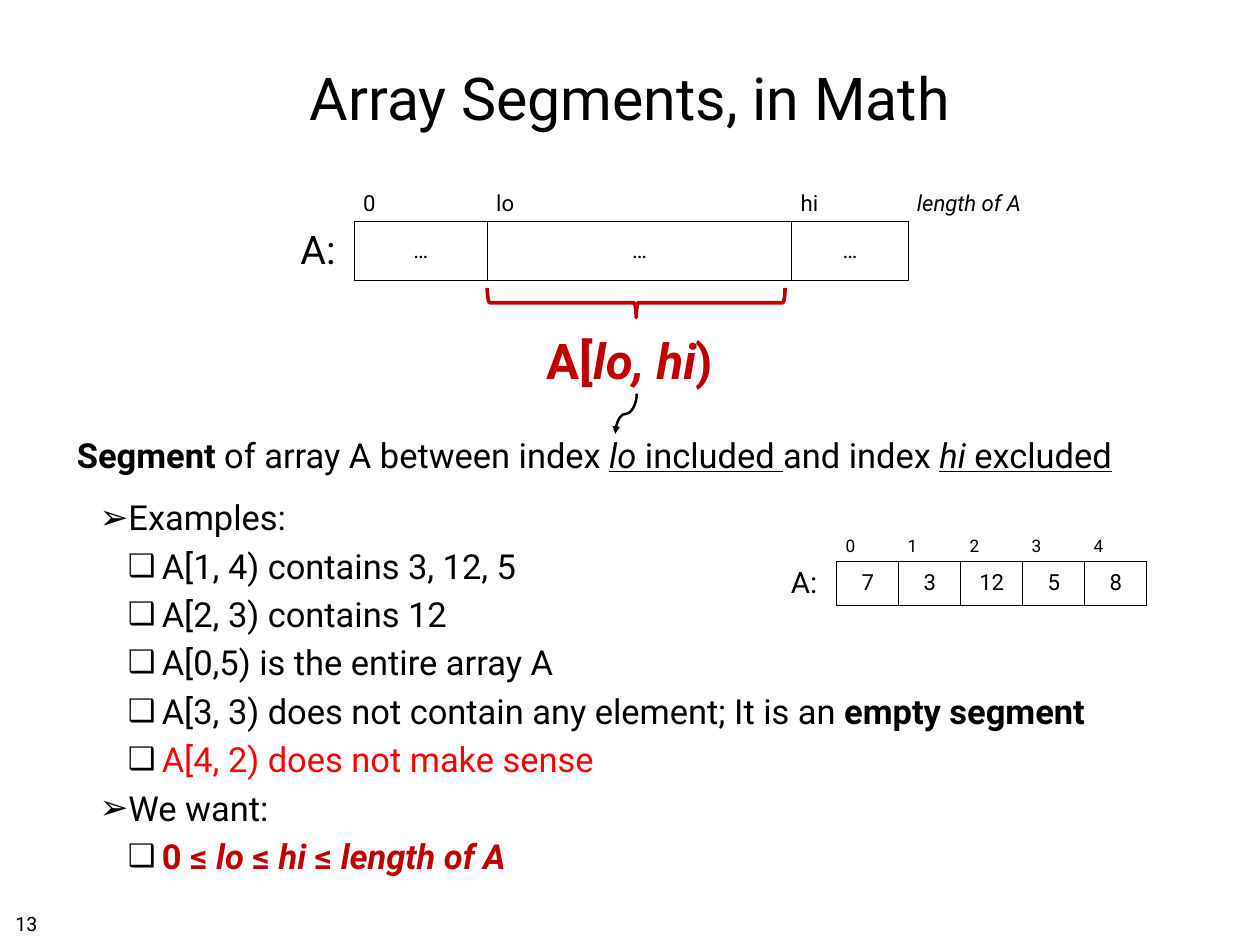
from lxml import etree
from pptx import Presentation
from pptx import util as u
from pptx.dml.color import RGBColor
from pptx.enum import shapes, text
from pptx.oxml import ns

Pt = u.Pt
BLACK = RGBColor(0x00, 0x00, 0x00)
RED = RGBColor(0xFF, 0x00, 0x00)
DARK_RED = RGBColor(0xC0, 0x00, 0x00)
NO_GRID_STYLE = "{2D5ABB26-0587-4C30-8999-92F81FD0307C}"
LEFT, CENTER = text.PP_ALIGN.LEFT, text.PP_ALIGN.CENTER
TOP, MIDDLE, BOTTOM = text.MSO_ANCHOR.TOP, text.MSO_ANCHOR.MIDDLE, text.MSO_ANCHOR.BOTTOM


def add_xml(parent, tag, **attributes):
    return etree.SubElement(parent, ns.qn(tag), attributes)


class SlideBuilder:
    font_name = "Roboto"
    inset = 4.5

    def __init__(self, slide):
        self.slide = slide

    def fill_paragraph(self, paragraph, runs, size, color=BLACK, bold=False, align=LEFT):
        """Fill a paragraph; each run is a text with style letters b, i, u."""
        paragraph.alignment = align
        font = paragraph.font
        font.name, font.size, font.bold = self.font_name, Pt(size), bold
        font.color.rgb = color
        for words, style in runs:
            run = paragraph.add_run()
            run.text = words
            if "b" in style:
                run.font.bold = True
            if "i" in style:
                run.font.italic = True
            if "u" in style:
                run.font.underline = True

    def frame(self, shape, box, anchor=TOP, inset=inset, wrap=True):
        shape.left, shape.top, shape.width, shape.height = map(Pt, box)
        frame = shape.text_frame
        frame.auto_size = text.MSO_AUTO_SIZE.NONE
        frame.word_wrap = wrap
        frame.vertical_anchor = anchor
        frame.margin_left = frame.margin_right = Pt(inset)
        frame.margin_top = frame.margin_bottom = Pt(min(inset, self.inset))
        return frame

    def title(self, box, words, size):
        frame = self.frame(self.slide.shapes.title, box, MIDDLE)
        self.fill_paragraph(frame.paragraphs[0], [(words, "")], size, align=CENTER)

    def bullets(self, box, items, size):
        frame = self.frame(self.slide.placeholders[1], box)
        for index, (level, runs, color, bold) in enumerate(items):
            paragraph = frame.paragraphs[0] if index == 0 else frame.add_paragraph()
            paragraph.level = level
            symbol, percent, margin, hanging, space = {
                1: ("➢", 100, 85.5, 23, 6),
                2: ("❑", 90, 113, 27.5, 5.6),
            }[level]
            paragraph.space_before = Pt(space)
            properties = paragraph._p.get_or_add_pPr()
            properties.set("marL", str(Pt(margin)))
            properties.set("indent", str(-Pt(hanging)))
            add_xml(add_xml(properties, "a:buClr"), "a:srgbClr", val=str(BLACK))
            add_xml(properties, "a:buSzPct", val=str(percent * 1000))
            add_xml(properties, "a:buChar", char=symbol)
            self.fill_paragraph(paragraph, runs, size, color, bold)

    def label(self, box, runs, size, anchor=TOP, inset=inset, wrap=False, **style):
        shape = self.slide.shapes.add_textbox(*map(Pt, box))
        frame = self.frame(shape, box, anchor, inset, wrap)
        self.fill_paragraph(frame.paragraphs[0], runs, size, **style)

    def array(self, left, top, widths, heights, indices, values, index_size):
        """Draw an array as a row of indices above a row of bordered cells."""
        shape = self.slide.shapes.add_table(
            2, len(widths), Pt(left), Pt(top), Pt(sum(widths)), Pt(sum(heights)))
        table = shape.table
        table.first_row = table.horz_banding = False
        table._tbl.tblPr[0].text = NO_GRID_STYLE
        for column, width in zip(table.columns, widths):
            column.width = Pt(width)
        for row, height in zip(table.rows, heights):
            row.height = Pt(height)
        for column, runs in enumerate(indices):
            cell = table.cell(0, column)
            cell.fill.background()
            cell.vertical_anchor = BOTTOM
            self.fill_paragraph(cell.text_frame.paragraphs[0], [runs], index_size)
        for column in range(len(widths)):
            cell = table.cell(1, column)
            if column < len(values):
                self.border(cell)
                cell.vertical_anchor = MIDDLE
                self.fill_paragraph(cell.text_frame.paragraphs[0],
                                    [(values[column], "")], 18, align=CENTER)
            cell.fill.background()

    def border(self, cell):
        properties = cell._tc.get_or_add_tcPr()
        for side in "LRTB":
            line = add_xml(properties, f"a:ln{side}", w=str(Pt(1)))
            add_xml(add_xml(line, "a:solidFill"), "a:srgbClr", val=str(BLACK))

    def brace(self, box, color, width):
        shape = self.slide.shapes.add_shape(
            shapes.MSO_SHAPE.RIGHT_BRACE, *map(Pt, box))
        shape.rotation = 90
        shape.shadow.inherit = False
        shape.fill.background()
        shape.line.color.rgb = color
        shape.line.width = Pt(width)

    def curved_arrow(self, left, top, width, height, line_width):
        """Draw a curved arrow turned a quarter, so that it points down."""
        connector = self.slide.shapes.add_connector(
            shapes.MSO_CONNECTOR.CURVE,
            Pt(left), Pt(top), Pt(left + width), Pt(top + height))
        connector.line.color.rgb = BLACK
        connector.line.width = Pt(line_width)
        properties = connector._element.spPr
        properties.xfrm.set("rot", str(90 * 60000))
        add_xml(properties.find(ns.qn("a:ln")), "a:tailEnd", type="triangle")
        add_xml(properties, "a:effectLst")


def main():
    presentation = Presentation()
    presentation.slide_width, presentation.slide_height = Pt(1024), Pt(768)
    layout = presentation.slide_layouts[1]
    builder = SlideBuilder(presentation.slides.add_slide(layout))

    # Title
    builder.title((75, 20, 874, 118), "Array Segments, in Math", 48)

    # Examples and the condition
    builder.bullets((14, 399, 992, 316), [
        (1, [("Examples:", "")], BLACK, False),
        (2, [("A[1, 4) contains 3, 12, 5", "")], BLACK, False),
        (2, [("A[2, 3) contains 12", "")], BLACK, False),
        (2, [("A[0,5) is the entire array A", "")], BLACK, False),
        (2, [("A[3, 3) does not contain any element; It is an ", ""),
             ("empty segment", "b")], BLACK, False),
        (2, [("A[4, 2) does not make sense", "")], RED, False),
        (1, [("We want:", "")], BLACK, False),
        (2, [("0 ≤ ", ""), ("lo", "i"), (" ≤ ", ""), ("hi", "i"),
             (" ≤ ", ""), ("length of A", "i")], DARK_RED, True),
    ], 28)

    # Example array
    builder.label((638, 454, 31, 38), [("A:", "")], 24, MIDDLE, align=CENTER)
    builder.array(680, 420, [50.4] * 5, [36, 36],
                  [(str(index), "") for index in range(5)],
                  ["7", "3", "12", "5", "8"], 14)

    # General array with its segment
    builder.label((234, 179, 49, 47), [("A:", "")], 32, MIDDLE, align=CENTER)
    builder.array(288, 144, [108, 247.5, 94.5, 103.5], [36, 48],
                  [("0", ""), ("lo", ""), ("hi", ""), ("length of A", "i")],
                  ["…"] * 3, 18)
    builder.brace((505, 125, 24, 242), DARK_RED, 3)

    # Segment notation and its meaning
    builder.label((437, 264, 160, 55),
                  [("A[", ""), ("lo, hi", "i"), (")", "")],
                  40, inset=7.2, color=DARK_RED, bold=True)
    builder.label((55.5, 348, 889, 75), [
        ("Segment ", "b"), ("of array A between index ", ""), ("lo", "iu"),
        (" included ", "u"), ("and index ", ""), ("hi ", "iu"), ("excluded", "u"),
    ], 28, inset=7.2, wrap=True)
    builder.curved_arrow(492.5, 327.5, 32.5, 17.5, 2)

    # Slide number
    builder.label((8, 736.5, 27, 25), [("13", "")], 16)

    presentation.save("out.pptx")


if __name__ == "__main__":
    main()
